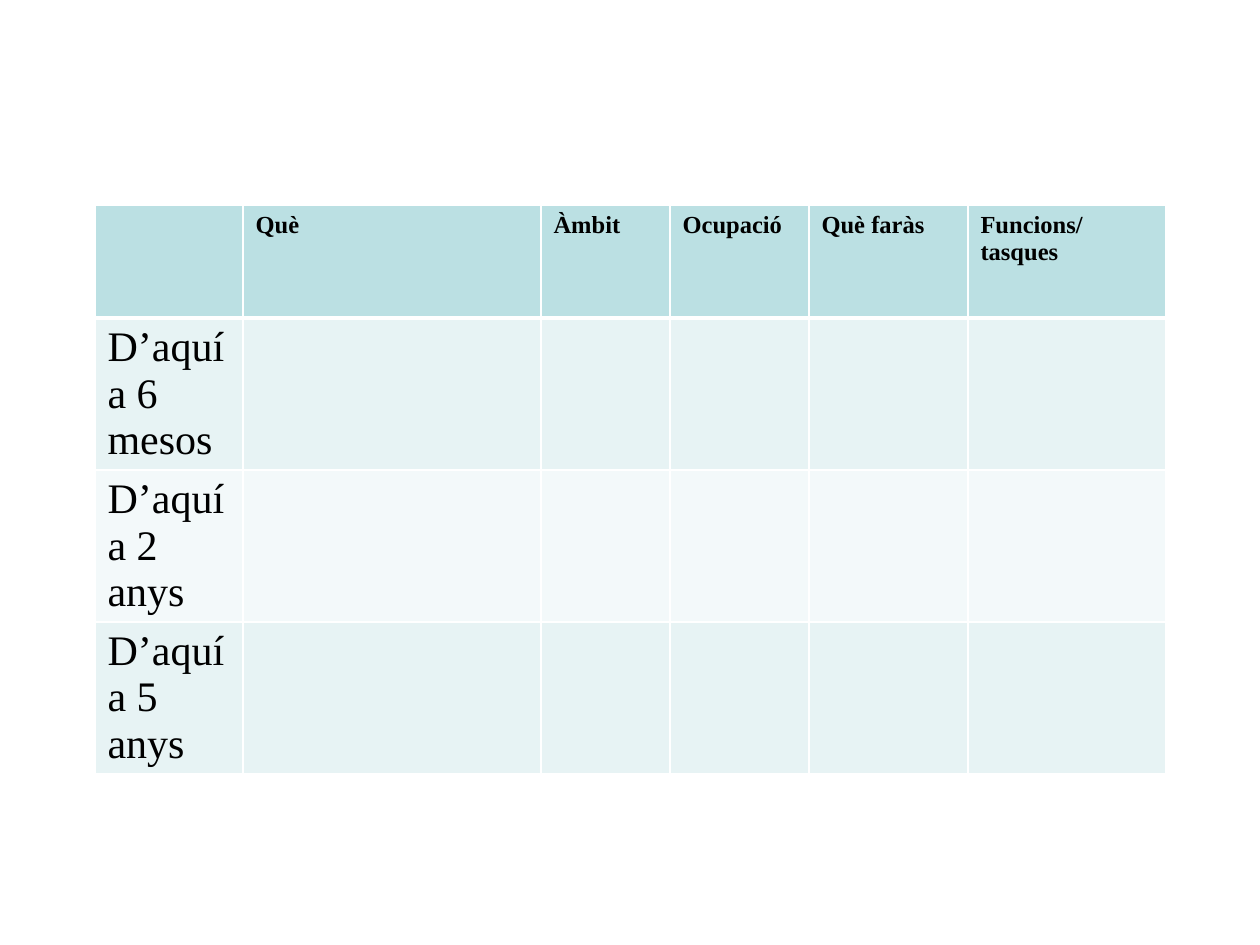
from dataclasses import dataclass

from lxml.etree import SubElement
from pptx import Presentation
from pptx.dml.color import RGBColor as Rgb
from pptx.oxml.ns import qn
from pptx.util import Pt

PX = 914400 // 126


@dataclass(frozen=True)
class Theme:
    font: str = "Times New Roman"
    text: str = "000000"
    border: str = "FFFFFF"
    header: str = "BBE0E3"
    bands: tuple = ("E7F3F4", "F3F9FA")
    header_size: int = 14
    period_size: int = 24
    thin: int = 1
    thick: int = 3


THEME = Theme()


def add_border(cell, side, width):
    """Draw one cell side (L, R, T or B); call before filling the cell."""
    line = SubElement(cell._tc.get_or_add_tcPr(), qn(f"a:ln{side}"), w=str(Pt(width)))
    fill = SubElement(line, qn("a:solidFill"))
    SubElement(fill, qn("a:srgbClr"), val=THEME.border)


headings = ["", "Què", "Àmbit", "Ocupació", "Què faràs", "Funcions/tasques"]
periods = ["D’aquí a 6 mesos", "D’aquí a 2 anys", "D’aquí a 5 anys"]
column_widths = [148, 298, 129, 139, 159, 198]
row_heights = [113] + [140] * len(periods)
plan_rows = [headings] + [[period] + [""] * (len(headings) - 1) for period in periods]

prs = Presentation()
prs.slide_width, prs.slide_height = 1260 * PX, 945 * PX
slide = prs.slides.add_slide(prs.slide_layouts[6])

plan = slide.shapes.add_table(
    len(plan_rows), len(headings),
    95 * PX, 205 * PX, sum(column_widths) * PX, sum(row_heights) * PX,
).table
for column, width in zip(plan.columns, column_widths):
    column.width = width * PX
for row, height in zip(plan.rows, row_heights):
    row.height = height * PX

for r, entries in enumerate(plan_rows):
    is_header = r == 0
    background = THEME.header if is_header else THEME.bands[(r - 1) % 2]
    for c, entry in enumerate(entries):
        cell = plan.cell(r, c)
        add_border(cell, "L", THEME.thin)
        add_border(cell, "R", THEME.thin)
        add_border(cell, "T", THEME.thick if r == 1 else THEME.thin)
        add_border(cell, "B", THEME.thick if is_header else THEME.thin)
        cell.fill.solid()
        cell.fill.fore_color.rgb = Rgb.from_string(background)
        if entry:
            run = cell.text_frame.paragraphs[0].add_run()
            run.text = entry
            run.font.name = THEME.font
            run.font.size = Pt(THEME.header_size if is_header else THEME.period_size)
            run.font.bold = is_header
            run.font.color.rgb = Rgb.from_string(THEME.text)

prs.save("out.pptx")
